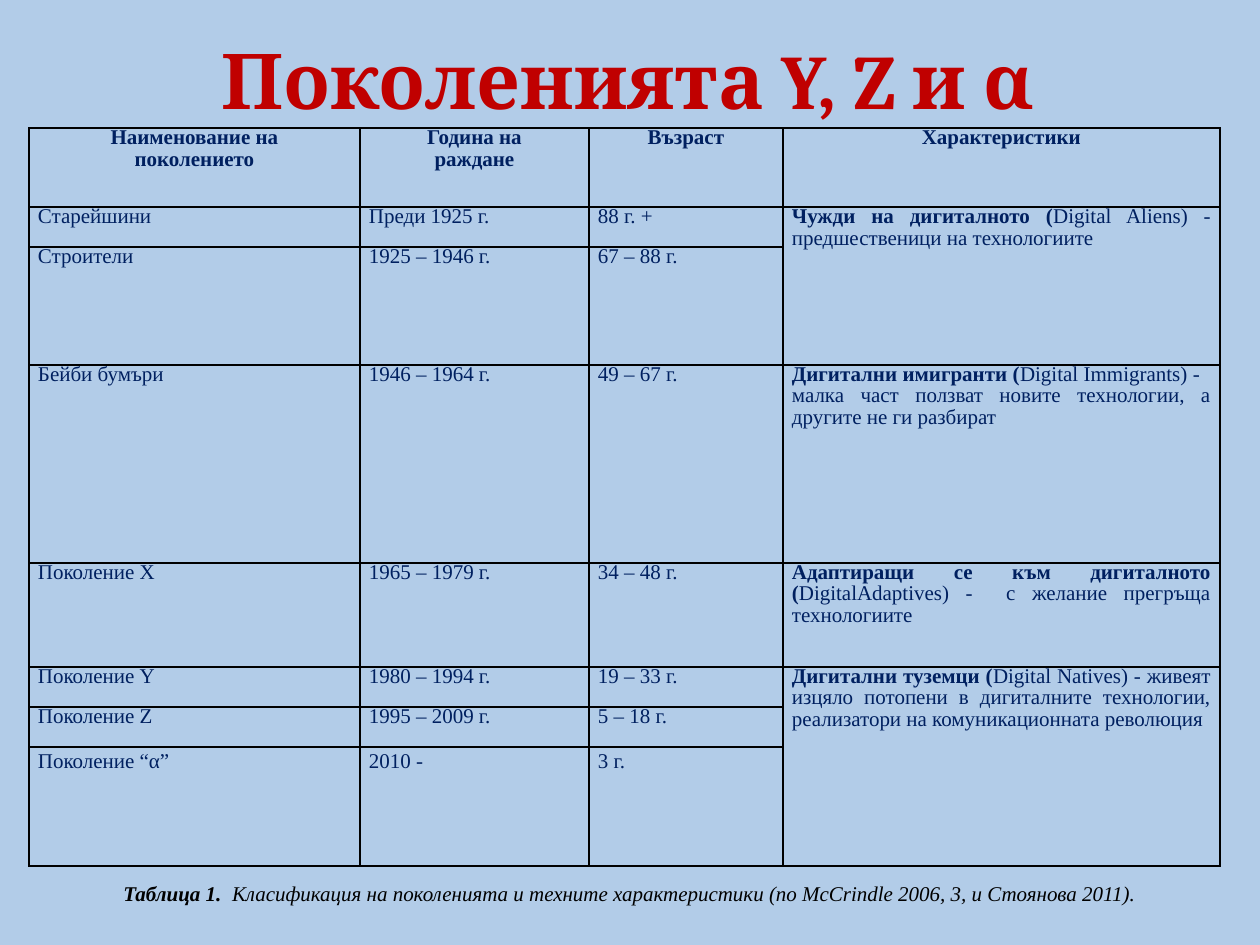
"""Builds the slide on generations Y, Z and α with its classification table."""
from lxml import etree
from pptx import Presentation, util as u
from pptx.dml.color import RGBColor
from pptx.enum import text
from pptx.oxml import ns

PX = 914400 // 126
COLORS = {"background": "B2CCE8", "title": "C00000", "table": "002060", "line": "000000"}
SERIF = "Times New Roman"
TITLE = "Поколенията Y, Z и α "
HEADERS = ["Наименование на\nпоколението", "Година на\nраждане", "Възраст", "Характеристики"]
GENERATIONS = [
    ("Старейшини", "Преди 1925 г.", "88 г. +"),
    ("Строители", "1925 – 1946 г.", "67 – 88 г."),
    ("Бейби бумъри", "1946 – 1964 г.", "49 – 67 г."),
    ("Поколение X", "1965 – 1979 г.", "34 – 48 г."),
    ("Поколение Y", "1980 – 1994 г.", "19 – 33 г."),
    ("Поколение Z", "1995 – 2009 г.", "5 – 18 г."),
    ("Поколение “α”", "2010 -", "3 г."),
]
TRAITS = [
    (1, 2, "Чужди на дигиталното (", "Digital Aliens) - предшественици на технологиите"),
    (3, 3, "Дигитални имигранти (",
     "Digital Immigrants) -   малка част ползват новите технологии, а другите не ги разбират"),
    (4, 4, "Адаптиращи се към дигиталното (",
     "DigitalAdaptives) -  с желание прегръща технологиите"),
    (5, 7, "Дигитални туземци (",
     "Digital Natives) - живеят изцяло потопени в дигиталните технологии, "
     "реализатори на комуникационната революция"),
]
CAPTION = [("Таблица 1. ", True),
           (" Класификация на поколенията и техните характеристики "
            "(по McCrindle 2006, 3, и Стоянова 2011).", False)]
COLUMN_WIDTHS = [331, 229, 194, 437]
ROW_HEIGHTS = [79, 40, 118, 198, 104, 40, 40, 119]
CENTER, JUSTIFY = text.PP_ALIGN.CENTER, text.PP_ALIGN.JUSTIFY


def px(*lengths):
    return [u.Emu(length * PX) for length in lengths]


def write(frame, paragraphs, size=12, font=SERIF, color="table", align=JUSTIFY,
          italic=None, spacing=None):
    for index, runs in enumerate(paragraphs):
        paragraph = frame.add_paragraph() if index else frame.paragraphs[0]
        paragraph.alignment = align
        paragraph.line_spacing = spacing
        for words, bold in runs:
            run = paragraph.add_run()
            run.text = words
            run.font.size, run.font.name = u.Pt(size), font
            run.font.bold, run.font.italic = bold, italic
            run.font.color.rgb = RGBColor.from_string(COLORS[color])


def format_cell(cell):
    cell.margin_left = cell.margin_right = px(9)[0]
    cell.margin_top = cell.margin_bottom = 0
    properties = cell._tc.get_or_add_tcPr()
    for side in ("a:lnL", "a:lnR", "a:lnT", "a:lnB"):
        line = etree.SubElement(properties, ns.qn(side), w=str(u.Pt(1)))
        fill = etree.SubElement(line, ns.qn("a:solidFill"))
        etree.SubElement(fill, ns.qn("a:srgbClr"), val=COLORS["line"])
    cell.fill.background()


def add_generations_table(slide):
    shape = slide.shapes.add_table(len(ROW_HEIGHTS), len(COLUMN_WIDTHS),
                                   *px(29, 128, sum(COLUMN_WIDTHS), sum(ROW_HEIGHTS)))
    table = shape.table
    table.first_row = table.horz_banding = False
    for column, width in zip(table.columns, px(*COLUMN_WIDTHS)):
        column.width = width
    for row, height in zip(table.rows, px(*ROW_HEIGHTS)):
        row.height = height
    for cell in table.iter_cells():
        format_cell(cell)

    exact = u.Pt(12.2)
    for column, header in enumerate(HEADERS):
        write(table.cell(0, column).text_frame,
              [[(line, True)] for line in header.split("\n")], align=CENTER, spacing=exact)
    for row, generation in enumerate(GENERATIONS, 1):
        spacing = 1.15 if row == len(GENERATIONS) else exact
        for column, words in enumerate(generation):
            write(table.cell(row, column).text_frame, [[(words, False)]], spacing=spacing)
    for first, last, name, description in TRAITS:
        cell = table.cell(first, 3)
        if last > first:
            cell.merge(table.cell(last, 3))
        write(cell.text_frame, [[(name, True), (description, False)]], spacing=exact)


def main():
    presentation = Presentation()
    presentation.slide_width, presentation.slide_height = px(1260, 945)
    slide = presentation.slides.add_slide(presentation.slide_layouts[5])
    slide.background.fill.solid()
    slide.background.fill.fore_color.rgb = RGBColor.from_string(COLORS["background"])

    title = slide.shapes.title
    title.left, title.top, title.width, title.height = px(69, 0, 1134, 157)
    title.text_frame.vertical_anchor = text.MSO_ANCHOR.MIDDLE
    write(title.text_frame, [[(TITLE, True)]], size=44, font="Cambria", color="title",
          align=CENTER)

    add_generations_table(slide)

    caption = slide.shapes.add_textbox(*px(0, 857, 1260, 55)).text_frame
    caption.word_wrap = True
    caption.vertical_anchor = text.MSO_ANCHOR.BOTTOM
    write(caption, [CAPTION], color="line", align=CENTER, italic=True)
    presentation.save("out.pptx")


if __name__ == "__main__":
    main()
